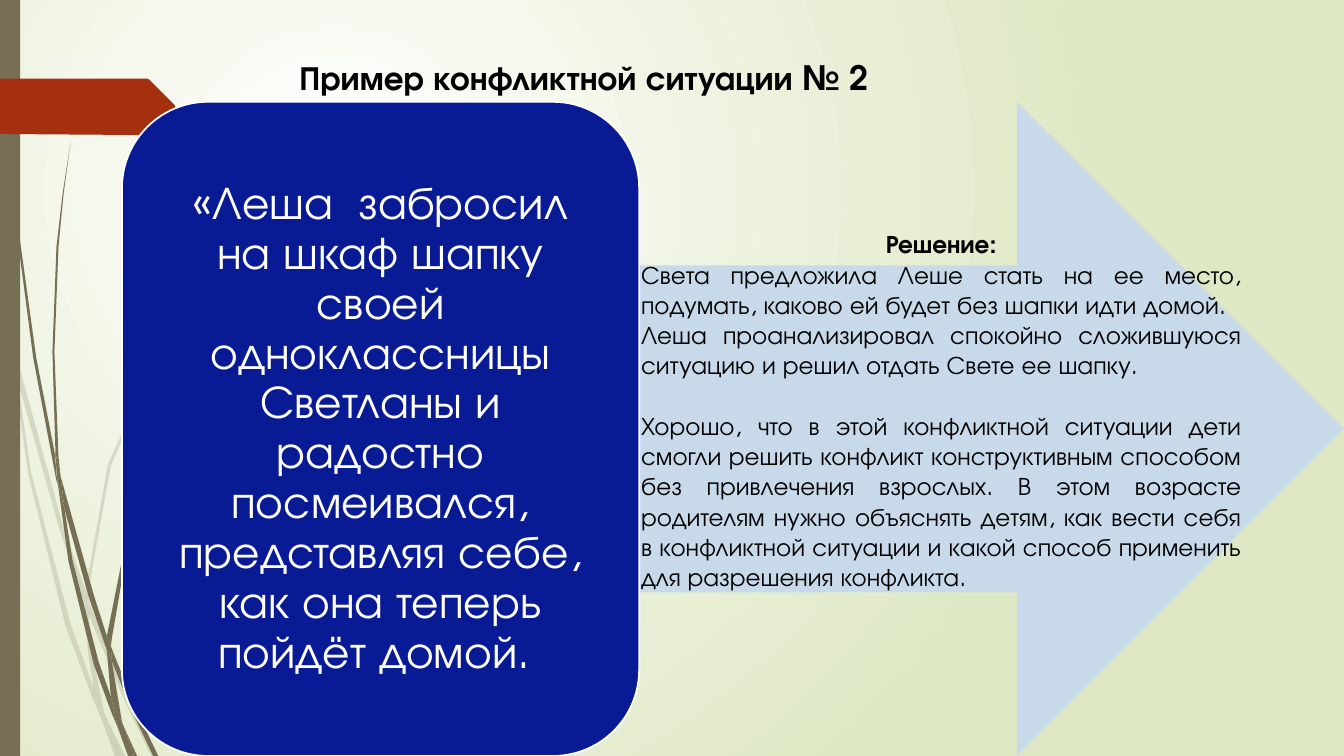
"""Build a slide that presents a school conflict and how it was solved."""
from lxml.etree import SubElement
from pptx import Presentation
from pptx.dml.color import RGBColor
from pptx.enum.shapes import MSO_SHAPE
from pptx.enum.text import MSO_ANCHOR, PP_ALIGN
from pptx.oxml.ns import qn
from pptx.util import Inches, Pt

FONT = "TeX Gyre Adventor"
OLIVE, RUST, NAVY, SKY = "766F54", "A53010", "091A95", "C8DAEA"
BACKGROUND = ["FFFFFF", "DFE8C4"]
TITLE = "Пример конфликтной ситуации № 2"
SITUATION = (
    "«Леша  забросил на шкаф шапку своей одноклассницы Светланы и радостно "
    "посмеивался, представляя себе, как она теперь пойдёт домой. "
)
HEADING = "Решение:"
SOLUTION = [
    ("Света предложила Леше стать на ее место, подумать, каково ей будет без "
     "шапки идти домой.", 0),
    ("Леша проанализировал спокойно сложившуюся ситуацию и решил отдать Свете "
     "ее шапку.", 0),
    ("Хорошо, что в этой конфликтной ситуации дети смогли решить конфликт "
     "конструктивным способом без привлечения взрослых. В этом возрасте "
     "родителям нужно объяснять детям, как вести себя в конфликтной ситуации "
     "и какой способ применить для разрешения конфликта.", 21.6),
]

# Outline points in hundredths of an inch
PALE_GRASS = [
    [(11, 350), (9, 322), (0, 282), (0, 299), (10, 344)],
    [(58, 522), (84, 599), (85, 586), (62, 520), (14, 345), (17, 376)],
    [(92, 607), (88, 596), (88, 610), (123, 694), (150, 750), (155, 750),
     (127, 692)],
    [(119, 750), (124, 750), (105, 711)],
    [(93, 683), (70, 619), (31, 469), (17, 376), (11, 350), (28, 470),
     (65, 621), (92, 693), (101, 714), (99, 707)],
    [(84, 599), (87, 646), (93, 683), (96, 692), (105, 711), (103, 706),
     (91, 646), (88, 610), (88, 608)],
    [(88, 584), (110, 462), (160, 349), (229, 245), (268, 198), (290, 175),
     (312, 154), (289, 175), (268, 197), (228, 244), (158, 348), (107, 461),
     (85, 584), (85, 586), (88, 596)],
    [(101, 714), (114, 750), (119, 750)],
    [(88, 608), (88, 596), (85, 586), (84, 599)],
    [(96, 692), (93, 683), (99, 707), (101, 714), (119, 750), (105, 711)],
]
DARK_GRASS = [
    [(7, 110), (17, 233), (33, 355), (56, 477), (57, 481), (55, 457),
     (55, 453), (36, 355), (19, 232), (8, 109), (5, 48), (3, 0), (3, 48)],
    [(88, 592), (106, 645), (106, 631), (93, 590), (60, 472), (64, 505)],
    [(113, 649), (110, 641), (111, 656), (132, 708), (152, 750), (157, 750),
     (136, 706)],
    [(110, 691), (98, 657), (72, 556), (64, 505), (57, 477), (68, 557),
     (93, 659), (111, 708), (117, 722), (116, 717)],
    [(60, 472), (58, 453), (54, 349), (58, 245), (63, 193), (70, 141),
     (62, 193), (56, 245), (52, 349), (55, 449)],
    [(133, 750), (136, 750), (122, 719)],
    [(57, 477), (64, 505), (60, 472), (55, 449), (55, 453)],
    [(111, 633), (125, 552), (158, 476), (205, 406), (231, 374), (246, 359),
     (261, 344), (245, 358), (231, 373), (204, 405), (156, 474), (122, 551),
     (106, 631), (110, 641)],
    [(117, 722), (127, 750), (131, 750)],
    [(106, 645), (110, 691), (116, 706), (122, 719), (121, 716), (111, 656),
     (109, 651)],
    [(106, 645), (109, 651), (111, 656), (110, 641), (106, 631)],
    [(116, 706), (110, 691), (116, 717), (117, 722), (130, 750), (133, 750),
     (122, 719)],
]
TAG = [(0, 78), (146, 78), (148, 79), (173, 104), (174, 106), (173, 108),
       (148, 133), (146, 134), (136, 134), (0, 133)]


def color(value):
    return RGBColor.from_string(value)


def paint(shape, fill, opacity=100):
    shape.shadow.inherit = False
    shape.fill.solid()
    shape.fill.fore_color.rgb = color(fill)
    shape.line.fill.background()
    if opacity < 100:
        tint = shape.element.spPr.find(f"{qn('a:solidFill')}/{qn('a:srgbClr')}")
        SubElement(tint, qn("a:alpha"), val=str(opacity * 1000))


def add_preset(page, kind, place, fill):
    shape = page.shapes.add_shape(kind, *map(Inches, place))
    paint(shape, fill)
    return shape


def add_outline(page, points, fill, opacity=100):
    builder = page.shapes.build_freeform(*points[0], scale=Inches(0.01))
    builder.add_line_segments(points[1:], close=True)
    paint(builder.convert_to_shape(), fill, opacity)


def write(para, text, size, align, fill="000000", bold=False):
    para.alignment = align
    span = para.add_run()
    span.text = text
    span.font.name = FONT
    span.font.size = Pt(size)
    span.font.bold = bold
    span.font.color.rgb = color(fill)


def set_background(page):
    fill = page.background.fill
    fill.gradient()
    for index, (stop, value) in enumerate(zip(fill.gradient_stops, BACKGROUND)):
        stop.position = index
        stop.color.rgb = color(value)
    linear = page.element.find(f".//{qn('a:lin')}")
    gradient = linear.getparent()
    gradient.remove(linear)
    circle = SubElement(gradient, qn("a:path"))
    circle.set("path", "circle")
    SubElement(circle, qn("a:fillToRect"), l="50000", t="50000", r="100000", b="100000")


def add_title(page):
    title = page.shapes.title
    title.left, title.top, title.width, title.height = map(Inches, (2.87, 0.51, 7.07, 0.51))
    title.text_frame.vertical_anchor = MSO_ANCHOR.TOP
    write(title.text_frame.paragraphs[0], TITLE, 24, PP_ALIGN.LEFT, bold=True)


def add_situation(page):
    box = add_preset(page, MSO_SHAPE.ROUNDED_RECTANGLE, (1.21, 1.01, 5.13, 6.49), NAVY)
    box.line.color.rgb = color("FFFFFF")
    box.line.width = Pt(1.25)
    frame = box.text_frame
    frame.word_wrap = True
    frame.vertical_anchor = MSO_ANCHOR.MIDDLE
    frame.margin_left = frame.margin_right = Inches(0.14)
    frame.margin_top = frame.margin_bottom = Inches(0.14)
    para = frame.paragraphs[0]
    para.line_spacing = 0.9
    write(para, SITUATION, 33, PP_ALIGN.CENTER, "FFFFFF")


def add_solution(page):
    box = page.shapes.add_textbox(*map(Inches, (6.26, 2.22, 6.15, 3.8)))
    frame = box.text_frame
    frame.word_wrap = True
    write(frame.paragraphs[0], HEADING, 18, PP_ALIGN.CENTER, bold=True)
    for text, gap in SOLUTION:
        para = frame.add_paragraph()
        para.space_before = Pt(gap)
        write(para, text, 18, PP_ALIGN.JUSTIFY)


def main():
    deck = Presentation()
    deck.slide_width, deck.slide_height = Inches(13.33), Inches(7.5)
    page = deck.slides.add_slide(deck.slide_layouts[5])
    set_background(page)
    for points in PALE_GRASS:
        add_outline(page, points, OLIVE, 20)
    for points in DARK_GRASS:
        add_outline(page, points, OLIVE)
    add_preset(page, MSO_SHAPE.RECTANGLE, (0, 0, 0.2, 7.5), OLIVE)
    add_outline(page, TAG, RUST)
    add_preset(page, MSO_SHAPE.RIGHT_ARROW, (1.34, 1.01, 11.99, 6.49), SKY)
    add_situation(page)
    add_title(page)
    add_solution(page)
    deck.save("out.pptx")


if __name__ == "__main__":
    main()
